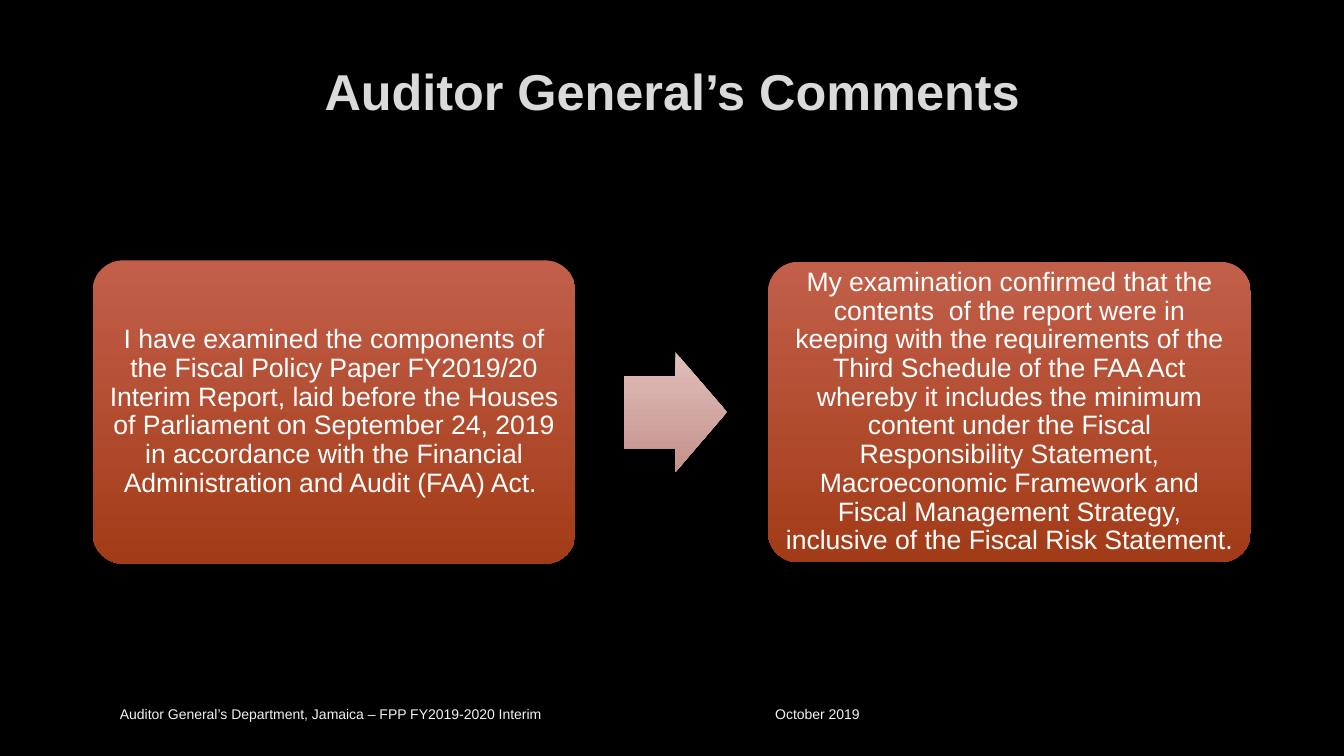
from dataclasses import dataclass

from lxml import etree
from pptx import Presentation
from pptx.dml.color import RGBColor
from pptx.enum.shapes import MSO_SHAPE
from pptx.enum.text import MSO_ANCHOR, PP_ALIGN
from pptx.oxml.ns import qn
from pptx.util import Inches, Pt

ROUNDED = MSO_SHAPE.ROUNDED_RECTANGLE
ARROW = MSO_SHAPE.RIGHT_ARROW
MIDDLE = MSO_ANCHOR.MIDDLE
CENTER = PP_ALIGN.CENTER
LEFT = PP_ALIGN.LEFT

BLACK = RGBColor(0x00, 0x00, 0x00)
TITLE_GRAY = RGBColor(0xDA, 0xDA, 0xDA)
FOOTER_GRAY = RGBColor(0xF2, 0xF2, 0xF2)
WHITE = RGBColor(0xFF, 0xFF, 0xFF)
RUST_LIGHT = RGBColor(0xC2, 0x5F, 0x4A)
RUST_DARK = RGBColor(0xA2, 0x3B, 0x17)
ROSE_LIGHT = RGBColor(0xE1, 0xBF, 0xBB)
ROSE_DARK = RGBColor(0xC4, 0x91, 0x8C)

FONT = "Arial"
SLIDE_WIDTH = Inches(13.33)
SLIDE_HEIGHT = Inches(7.5)
GRID = 100
FLOW_CENTER_ROW = 54.5
BOX_INSET = Inches(0.08)
DATE_TAB = Inches(6.5)


@dataclass(frozen=True)
class Label:
    text: str
    left: float
    top: float
    width: float
    height: float
    size: float
    color: RGBColor
    bold: bool
    alignment: PP_ALIGN


@dataclass(frozen=True)
class FlowStep:
    preset: MSO_SHAPE
    adjustments: tuple[float, ...]
    left: float
    width: float
    height: float
    gradient: tuple[RGBColor, RGBColor]
    text: str = ""


TITLE = Label("Auditor General’s Comments", 6.9, 5.33, 86.25, 13.2,
              36, TITLE_GRAY, True, CENTER)
FOOTER = Label(
    "Auditor General’s Department, Jamaica – FPP FY2019-2020 Interim\tOctober 2019",
    8.18, 91.2, 69.68, 6.4, 10, FOOTER_GRAY, False, LEFT)

FLOW = (
    FlowStep(
        ROUNDED, (0.1,), 6.9, 35.92, 40.13, (RUST_LIGHT, RUST_DARK),
        "I have examined the components of the Fiscal Policy Paper FY2019/20 "
        "Interim Report, laid before the Houses of Parliament on September 24, "
        "2019 in accordance with the Financial Administration and Audit (FAA) Act. "),
    FlowStep(ARROW, (0.6, 0.5), 46.43, 7.65, 15.87, (ROSE_LIGHT, ROSE_DARK)),
    FlowStep(
        ROUNDED, (0.1,), 57.15, 35.92, 39.73, (RUST_LIGHT, RUST_DARK),
        "My examination confirmed that the contents  of the report were in keeping "
        "with the requirements of the Third Schedule of the FAA Act whereby it "
        "includes the minimum content under the Fiscal Responsibility Statement, "
        "Macroeconomic Framework and Fiscal Management Strategy, inclusive of the "
        "Fiscal Risk Statement."),
)


def columns(count: float) -> int:
    return round(SLIDE_WIDTH * count / GRID)


def rows(count: float) -> int:
    return round(SLIDE_HEIGHT * count / GRID)


def write_text(shape, text: str, size: float, color: RGBColor,
               bold: bool = False, alignment: PP_ALIGN = CENTER):
    frame = shape.text_frame
    frame.word_wrap = True
    frame.vertical_anchor = MIDDLE
    paragraph = frame.paragraphs[0]
    paragraph.alignment = alignment
    run = paragraph.add_run()
    run.text = text
    run.font.name = FONT
    run.font.size = Pt(size)
    run.font.bold = bold
    run.font.color.rgb = color
    return paragraph


def add_label(slide, label: Label):
    shape = slide.shapes.add_textbox(columns(label.left), rows(label.top),
                                     columns(label.width), rows(label.height))
    return write_text(shape, label.text, label.size, label.color,
                      label.bold, label.alignment)


def add_tab_stop(paragraph, position: int) -> None:
    properties = paragraph._p.get_or_add_pPr()
    tab_list = etree.SubElement(properties, qn("a:tabLst"))
    etree.SubElement(tab_list, qn("a:tab"), pos=str(position), algn="l")


def add_flow_step(slide, step: FlowStep) -> None:
    shape = slide.shapes.add_shape(
        step.preset, columns(step.left), rows(FLOW_CENTER_ROW - step.height / 2),
        columns(step.width), rows(step.height))
    for index, value in enumerate(step.adjustments):
        shape.adjustments[index] = value
    shape.shadow.inherit = False
    shape.line.fill.background()
    shape.fill.gradient()
    shape.fill.gradient_angle = 270
    for stop, color in zip(shape.fill.gradient_stops, step.gradient):
        stop.color.rgb = color
    if step.text:
        frame = shape.text_frame
        frame.margin_left = frame.margin_right = BOX_INSET
        frame.margin_top = frame.margin_bottom = BOX_INSET
        write_text(shape, step.text, 19, WHITE).line_spacing = 0.9


def main() -> None:
    presentation = Presentation()
    presentation.slide_width = SLIDE_WIDTH
    presentation.slide_height = SLIDE_HEIGHT
    slide = presentation.slides.add_slide(presentation.slide_layouts[6])
    slide.background.fill.solid()
    slide.background.fill.fore_color.rgb = BLACK
    add_label(slide, TITLE)
    for step in FLOW:
        add_flow_step(slide, step)
    add_tab_stop(add_label(slide, FOOTER), DATE_TAB)
    presentation.save("out.pptx")


if __name__ == "__main__":
    main()
